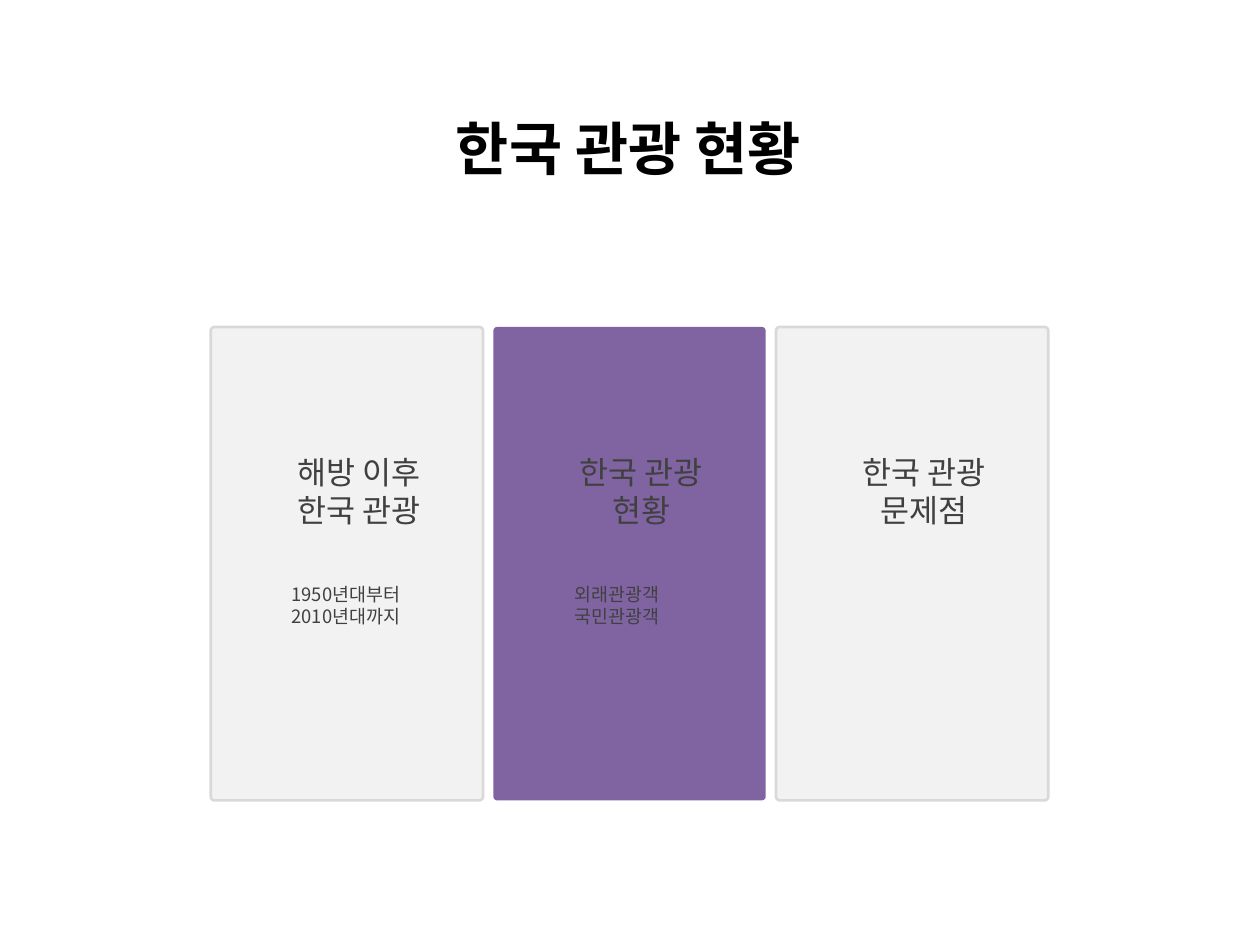
from lxml import etree
from pptx import Presentation
from pptx import util as u
from pptx.dml.color import RGBColor
from pptx.enum import shapes, text
from pptx.oxml import ns

COLORS = {"title": "000000", "label": "404040", "plain": "F2F2F2",
          "border": "D9D9D9", "active": "8064A2"}
FONT = "Noto Sans CJK KR"
CARDS = [
    {"heading": ["해방 이후", "한국 관광"], "details": ["1950년대부터", "2010년대까지"],
     "detail_width": 1.42, "active": False},
    {"heading": ["한국 관광", "현황"], "details": ["외래관광객", "국민관광객"],
     "detail_width": 1.18, "active": True},
    {"heading": ["한국 관광", "문제점"], "details": [],
     "detail_width": 0, "active": False},
]


def add_lines(page, box, lines, size, color, bold=False, anchor=text.MSO_ANCHOR.MIDDLE):
    """Place centred lines of text in a box."""
    frame = page.shapes.add_textbox(*map(u.Inches, box)).text_frame
    frame.word_wrap = False
    frame.vertical_anchor = anchor
    for index, line in enumerate(lines):
        para = frame.add_paragraph() if index else frame.paragraphs[0]
        formats = {"alignment": text.PP_ALIGN.CENTER, "line_spacing": u.Pt(size * 1.2)}
        for name, value in formats.items():
            setattr(para, name, value)
        span = para.add_run()
        span.text = line
        for name, value in {"size": u.Pt(size), "bold": bold, "name": FONT}.items():
            setattr(span.font, name, value)
        span.font.color.rgb = RGBColor.from_string(COLORS[color])
        east_asian = etree.SubElement(span.font._element, ns.qn("a:ea"))
        east_asian.set("typeface", FONT)


def add_card(page, box, card):
    """Place one topic card with its heading and details."""
    left, top, width, height = box
    panel = page.shapes.add_shape(shapes.MSO_SHAPE.ROUNDED_RECTANGLE, *map(u.Inches, box))
    panel.adjustments[0] = 0.013
    panel.shadow.inherit = False
    panel.fill.solid()
    fill = "active" if card["active"] else "plain"
    panel.fill.fore_color.rgb = RGBColor.from_string(COLORS[fill])
    if card["active"]:
        panel.line.fill.background()
    else:
        panel.line.color.rgb = RGBColor.from_string(COLORS["border"])
        panel.line.width = u.Pt(2)
    add_lines(page, (left + 0.73, top + 1.28, 1.67, 0.91), card["heading"], 24, "label")
    if card["details"]:
        add_lines(page, (left + 0.72, top + 2.42, card["detail_width"], 0.81),
                  card["details"], 14, "label", anchor=text.MSO_ANCHOR.BOTTOM)


def add_card_row(page, box, cards, gap):
    """Share the width of a box equally among the cards."""
    left, top, width, height = box
    card_width = (width - gap * (len(cards) - 1)) / len(cards)
    for index, card in enumerate(cards):
        add_card(page, (left + index * (card_width + gap), top, card_width, height), card)


def main():
    """Build the tourism overview slide."""
    deck = Presentation()
    deck.slide_width, deck.slide_height = u.Inches(13.33), u.Inches(10)
    page = deck.slides.add_slide(deck.slide_layouts[6])
    add_lines(page, (4.48, 1.14, 4.34, 0.84), ["한국 관광 현황"], 44, "title", bold=True)
    add_card_row(page, (2.23, 3.46, 8.86, 5.01), CARDS, gap=0.11)
    deck.save("out.pptx")


if __name__ == "__main__":
    main()
